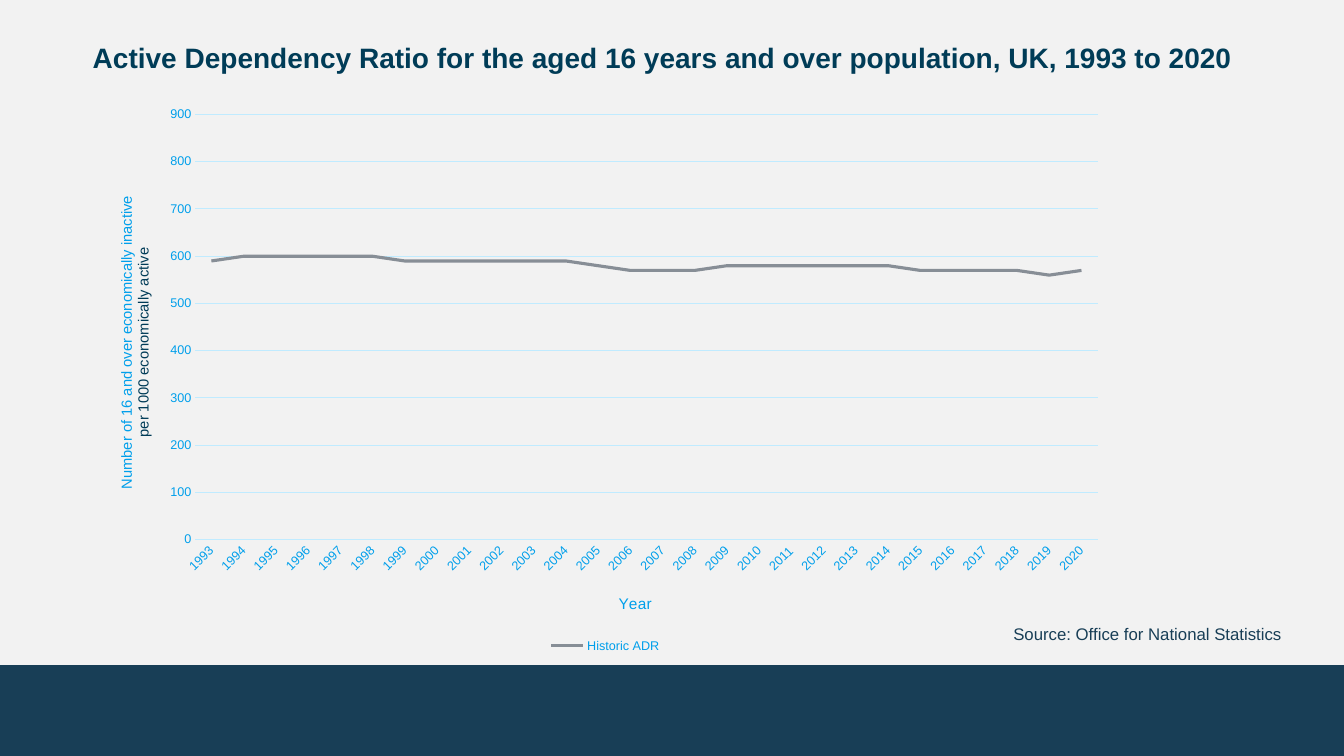
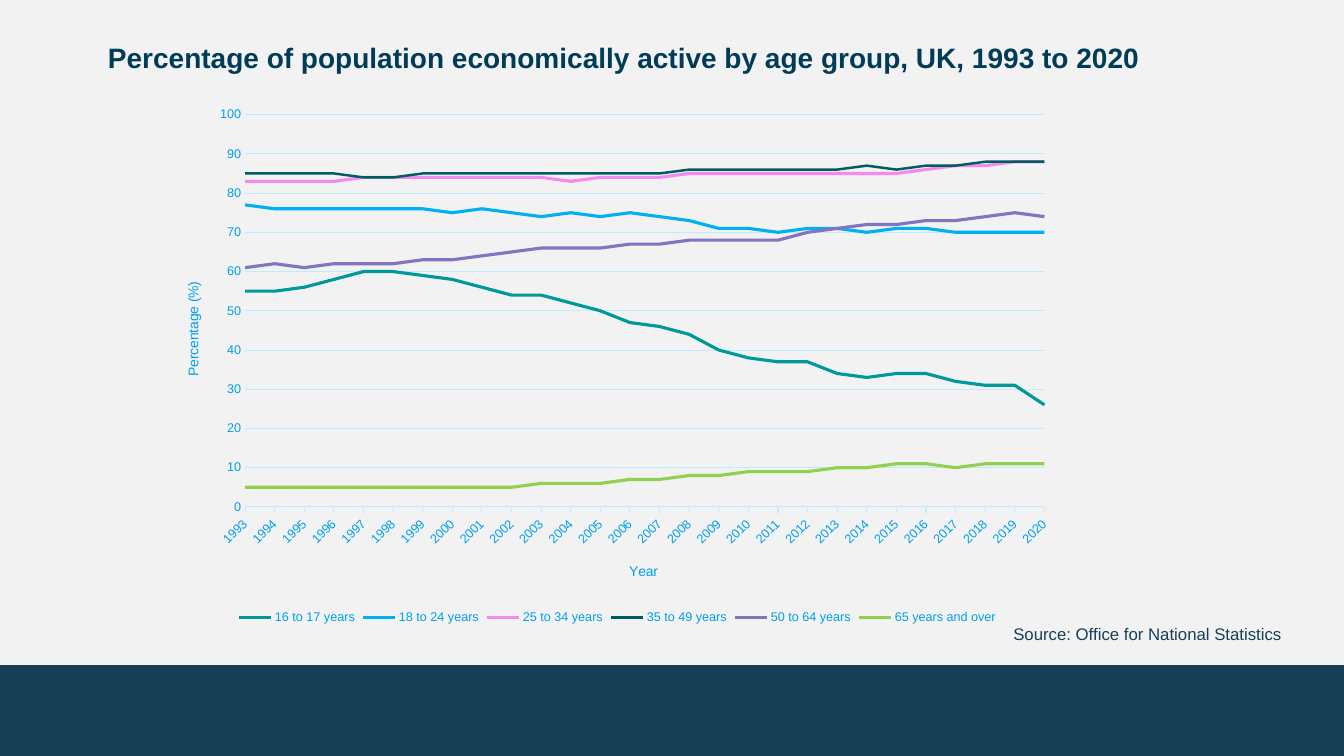
from lxml import etree
from pptx import Presentation
from pptx.chart.data import CategoryChartData
from pptx.dml.color import RGBColor
from pptx.enum.chart import (XL_CHART_TYPE, XL_LEGEND_POSITION,
                             XL_MARKER_STYLE, XL_TICK_MARK)
from pptx.enum.shapes import MSO_SHAPE
from pptx.enum.text import MSO_ANCHOR
from pptx.oxml.ns import qn
from pptx.util import Inches, Pt

LINE = XL_CHART_TYPE.LINE
BOTTOM = XL_LEGEND_POSITION.BOTTOM
PLAIN = XL_MARKER_STYLE.NONE
NONE, OUT = XL_TICK_MARK.NONE, XL_TICK_MARK.OUTSIDE
RECT = MSO_SHAPE.RECTANGLE
LOW, TOP = MSO_ANCHOR.BOTTOM, MSO_ANCHOR.TOP

FONT = "Arial"
PAPER = RGBColor(0xF2, 0xF2, 0xF2)
NAVY = RGBColor(0x18, 0x3E, 0x56)
INK = RGBColor(0x00, 0x3C, 0x57)
DARK = RGBColor(0x00, 0x3B, 0x57)
BLUE = RGBColor(0x00, 0x9F, 0xEB)
PALE = RGBColor(0xC0, 0xEB, 0xFF)
GREY = RGBColor(0x87, 0x8E, 0x96)
TEAL = RGBColor(0x00, 0x99, 0x99)
SKY = RGBColor(0x00, 0xB0, 0xF0)
PINK = RGBColor(0xF5, 0x89, 0xF2)
PINE = RGBColor(0x00, 0x5D, 0x5F)
VIOLET = RGBColor(0x82, 0x74, 0xBE)
LIME = RGBColor(0x92, 0xD0, 0x50)

# Content
SOURCE = "Source: Office for National Statistics"
YEARS = [str(year) for year in range(1993, 2021)]

# Series: name, colour, line width, values
RATIO = [
    ("Historic ADR", GREY, 2.25,
     [590, 600, 600, 600, 600, 600, 590, 590, 590, 590, 590, 590, 580, 570,
      570, 570, 580, 580, 580, 580, 580, 580, 570, 570, 570, 570, 560, 570]),
]
AGES = [
    ("16 to 17 years", TEAL, 2.25,
     [55, 55, 56, 58, 60, 60, 59, 58, 56, 54, 54, 52, 50, 47,
      46, 44, 40, 38, 37, 37, 34, 33, 34, 34, 32, 31, 31, 26]),
    ("18 to 24 years", SKY, 2.25,
     [77, 76, 76, 76, 76, 76, 76, 75, 76, 75, 74, 75, 74, 75,
      74, 73, 71, 71, 70, 71, 71, 70, 71, 71, 70, 70, 70, 70]),
    ("25 to 34 years", PINK, 2.25,
     [83, 83, 83, 83, 84, 84, 84, 84, 84, 84, 84, 83, 84, 84,
      84, 85, 85, 85, 85, 85, 85, 85, 85, 86, 87, 87, 88, 88]),
    ("35 to 49 years", PINE, 1.75,
     [85, 85, 85, 85, 84, 84, 85, 85, 85, 85, 85, 85, 85, 85,
      85, 86, 86, 86, 86, 86, 86, 87, 86, 87, 87, 88, 88, 88]),
    ("50 to 64 years", VIOLET, 2.25,
     [61, 62, 61, 62, 62, 62, 63, 63, 64, 65, 66, 66, 66, 67,
      67, 68, 68, 68, 68, 70, 71, 72, 72, 73, 73, 74, 75, 74]),
    ("65 years and over", LIME, 2.25,
     [5, 5, 5, 5, 5, 5, 5, 5, 5, 5, 6, 6, 6, 7,
      7, 8, 8, 9, 9, 9, 10, 10, 11, 11, 10, 11, 11, 11]),
]

# Boxes are in inches; plot and axis title places are shares of the chart
SLIDES = [
    dict(title="Active Dependency Ratio for the aged 16 years and over "
               "population, UK, 1993 to 2020",
         head=(0.92, 0.43, 11.5, 0.32), box=(0.92, 0.97, 10.17, 5.55),
         series=RATIO, top=900, step=100, tick=NONE, cross="between",
         plot=(0.1, 0.03, 0.88, 0.76),
         year=([("Year", BLUE)], 11, (0.51, 0.88)),
         unit=([("Number of 16 and over economically inactive", BLUE),
                ("per 1000 economically active", DARK)], 10.5, (0.02, 0.17))),
    dict(title="Percentage of population economically active by age group, "
               "UK, 1993 to 2020",
         head=(1.07, 0.43, 11.19, 0.32), box=(1.62, 0.98, 9.01, 5.26),
         series=AGES, top=100, step=10, tick=OUT, cross="midCat",
         plot=(0.09, 0.03, 0.88, 0.74),
         year=([("Year", BLUE)], 10, (0.51, 0.87)),
         unit=([("Percentage (%)", BLUE)], 10, (0.02, 0.34))),
]


def style(font, size, color, bold=False):
    font.name, font.size, font.bold = FONT, Pt(size), bold
    font.color.rgb = color


def place(part, spot, index, inner=False):
    """Fix a chart part at the given shares of the chart area."""
    layout = part.find(qn("c:layout"))
    if layout is None:
        layout = etree.Element(qn("c:layout"))
        part.insert(index, layout)
    manual = etree.SubElement(layout, qn("c:manualLayout"))
    rows = [("layoutTarget", "inner")] if inner else []
    rows += [("xMode", "edge"), ("yMode", "edge")]
    rows += zip("xywh", spot)
    for tag, val in rows:
        etree.SubElement(manual, qn("c:" + tag)).set("val", str(val))


def set_cross(axis, mode):
    """Start the lines on the value axis or half a step from it."""
    node = axis._element.find(qn("c:crossBetween"))
    if node is None:
        node = etree.Element(qn("c:crossBetween"))
        axis._element.find(qn("c:crosses")).addnext(node)
    node.set("val", mode)


def add_text(slide, box, text, size, color, bold=False, anchor=TOP):
    frame = slide.shapes.add_textbox(*map(Inches, box)).text_frame
    frame.word_wrap = True
    frame.vertical_anchor = anchor
    frame.margin_left = frame.margin_right = 0
    frame.margin_top = frame.margin_bottom = 0
    para = frame.paragraphs[0]
    para.text = text
    style(para.font, size, color, bold)
    return frame


def name_axis(axis, lines, size, spot, turn):
    frame = axis.axis_title.text_frame
    for i, (text, color) in enumerate(lines):
        para = frame.add_paragraph() if i else frame.paragraphs[0]
        para.text = text
        style(para.font, size, color)
    body = frame._txBody.find(qn("a:bodyPr"))
    body.set("rot", str(turn * 60000))
    body.set("vert", "horz")
    place(axis.axis_title._element, spot, 1)


def add_lines(slide, item):
    data = CategoryChartData()
    data.categories = YEARS
    for name, _, _, vals in item["series"]:
        data.add_series(name, vals)
    box = map(Inches, item["box"])
    chart = slide.shapes.add_chart(LINE, *box, data).chart
    chart.has_title = False
    style(chart.font, 10, DARK)
    chart.has_legend = True
    chart.legend.position = BOTTOM
    chart.legend.include_in_layout = False
    style(chart.legend.font, 9, BLUE)

    # Series
    plot = chart.plots[0]
    plot.vary_by_categories = False
    for series, (_, color, width, _) in zip(plot.series, item["series"]):
        series.smooth = False
        series.marker.style = PLAIN
        series.format.line.color.rgb = color
        series.format.line.width = Pt(width)

    # Axes
    cat, val = chart.category_axis, chart.value_axis
    for axis in (cat, val):
        style(axis.tick_labels.font, 9, BLUE)
        axis.minor_tick_mark = NONE
    cat.major_tick_mark, val.major_tick_mark = item["tick"], NONE
    val.minimum_scale, val.maximum_scale = 0, item["top"]
    val.major_unit = item["step"]
    val.tick_labels.number_format = "0"
    val.tick_labels.number_format_is_linked = False
    val.format.line.fill.background()
    for line in (cat.format.line, val.major_gridlines.format.line):
        line.color.rgb = PALE
        line.width = Pt(0.75)
    labels = cat._element.find(qn("c:txPr")).find(qn("a:bodyPr"))
    labels.set("rot", str(-45 * 60000))
    set_cross(val, item["cross"])
    name_axis(cat, *item["year"], 0)
    name_axis(val, *item["unit"], -90)
    area = chart._chartSpace.chart.plotArea
    place(area, item["plot"], 0, inner=True)


def add_base(prs):
    """Blank slide with the shared background and band."""
    slide = prs.slides.add_slide(prs.slide_layouts[6])
    slide.background.fill.solid()
    slide.background.fill.fore_color.rgb = PAPER
    band = slide.shapes.add_shape(RECT, 0, Inches(6.6), prs.slide_width,
                                  Inches(0.9))
    band.shadow.inherit = False
    band.fill.solid()
    band.fill.fore_color.rgb = NAVY
    band.line.fill.background()
    return slide


def main():
    prs = Presentation()
    prs.slide_width, prs.slide_height = Inches(13.33), Inches(7.5)
    for item in SLIDES:
        slide = add_base(prs)
        head = add_text(slide, item["head"], item["title"], 20, INK, True)
        head.paragraphs[0].line_spacing = 0.95
        add_lines(slide, item)
        note = add_text(slide, (10.05, 6.14, 3.2, 0.3), SOURCE, 12, NAVY,
                        anchor=LOW)
        note.margin_bottom = Inches(0.05)
    prs.save("out.pptx")


if __name__ == "__main__":
    main()
